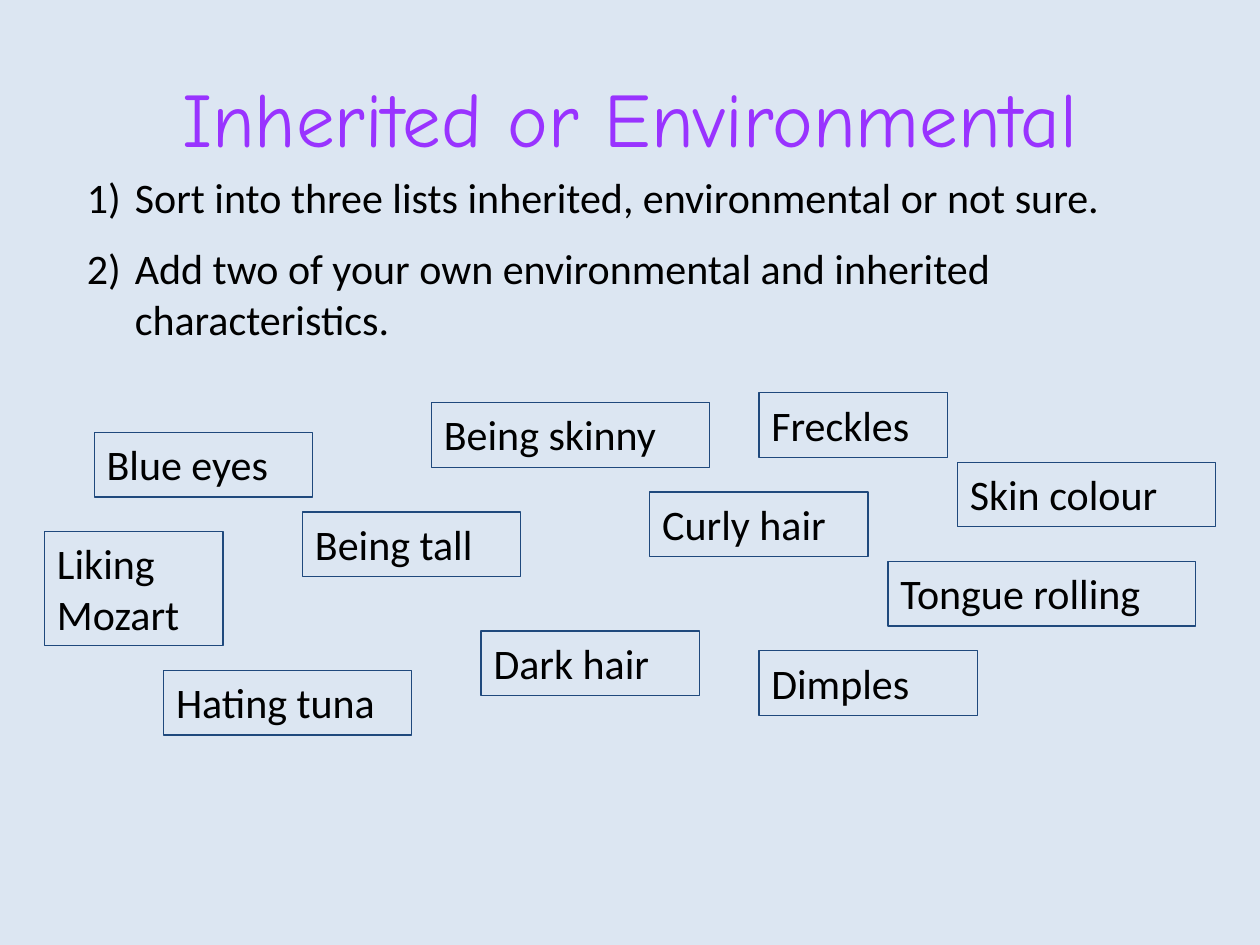
import pptx
import pptx.dml.color
import pptx.enum.shapes
import pptx.enum.text
import pptx.oxml
import pptx.util

WIDE, HIGH = 10, 7.5
UNIT = WIDE / 127      # 127 grid columns, 2 mm each
LEFT, TOP = 0.5, 0.6   # grid origin, in units
LINE, PAIR = 6.5, 11.5  # card heights for one and two lines of text
INK = "000000"

# Text, column, row, columns wide, rows high
CARDS = [
    ("Blue eyes", 9, 43, 22, LINE),
    ("Skin colour", 96, 46, 26, LINE),
    ("Liking Mozart", 4, 53, 18, PAIR),
    ("Being skinny", 43, 40, 28, LINE),
    ("Curly hair", 65, 49, 22, LINE),
    ("Dark hair", 48, 63, 22, LINE),
    ("Hating tuna", 16, 67, 25, LINE),
    ("Tongue rolling", 89, 56, 31, LINE),
    ("Freckles", 76, 39, 19, LINE),
    ("Being tall", 30, 51, 22, LINE),
    ("Dimples", 76, 65, 22, LINE),
]
TASKS = [
    "Sort into three lists inherited, environmental or not sure.",
    "Add two of your own environmental and inherited characteristics.",
]


def paint(target, tint):
    target.rgb = pptx.dml.color.RGBColor.from_string(tint)


def place(shape, *box):
    shape.left, shape.top, shape.width, shape.height = map(pptx.util.Inches, box)


def write(para, text, size=24, face="Calibri", tint=INK):
    run = para.add_run()
    run.text = text
    run.font.size = pptx.util.Pt(size)
    run.font.name = face
    paint(run.font.color, tint)


def number(para):
    props = para._p.get_or_add_pPr()
    props.set("marL", str(pptx.util.Inches(0.38)))
    props.set("indent", str(pptx.util.Inches(-0.38)))
    mark = pptx.oxml.parse_xml(
        '<a:buAutoNum xmlns:a="http://schemas.openxmlformats.org/drawingml/2006/main"'
        ' type="arabicParenR"/>')
    props.append(mark)


def add_title(slide, text):
    title = slide.shapes.title
    place(title, 0.05 * WIDE, 0.04 * HIGH, 0.9 * WIDE, HIGH / 6)
    frame = title.text_frame
    frame.auto_size = pptx.enum.text.MSO_AUTO_SIZE.NONE
    frame.vertical_anchor = pptx.enum.text.MSO_ANCHOR.MIDDLE
    para = frame.paragraphs[0]
    para.alignment = pptx.enum.text.PP_ALIGN.CENTER
    write(para, text, 44, "Comic Neue", "9933FF")


def add_list(slide, items):
    body = slide.placeholders[1]
    place(body, 0.59, 1.31, 8.66, 1.9)
    frame = body.text_frame
    frame.auto_size = pptx.enum.text.MSO_AUTO_SIZE.NONE
    for rank, item in enumerate(items):
        para = frame.add_paragraph() if rank else frame.paragraphs[0]
        number(para)
        para.space_before = pptx.util.Pt(12 if rank else 0)
        write(para, item)


def add_card(slide, text, col, row, wide, high):
    card = slide.shapes.add_shape(
        pptx.enum.shapes.MSO_SHAPE.RECTANGLE, 0, 0, 0, 0)
    place(card, (col + LEFT) * UNIT, (row + TOP) * UNIT, wide * UNIT, high * UNIT)
    card.shadow.inherit = False
    card.fill.background()
    paint(card.line.color, "1F497D")
    card.line.width = pptx.util.Pt(0.75)
    frame = card.text_frame
    frame.word_wrap = True
    frame.vertical_anchor = pptx.enum.text.MSO_ANCHOR.TOP
    para = frame.paragraphs[0]
    para.alignment = pptx.enum.text.PP_ALIGN.LEFT
    write(para, text)


def main():
    deck = pptx.Presentation()
    deck.slide_width = pptx.util.Inches(WIDE)
    deck.slide_height = pptx.util.Inches(HIGH)
    slide = deck.slides.add_slide(deck.slide_layouts[1])

    # Background
    back = slide.background.fill
    back.solid()
    paint(back.fore_color, "DCE6F2")

    # Heading and tasks
    add_title(slide, "Inherited or Environmental")
    add_list(slide, TASKS)

    # Characteristics to sort
    for card in CARDS:
        add_card(slide, *card)

    deck.save("out.pptx")


if __name__ == "__main__":
    main()
